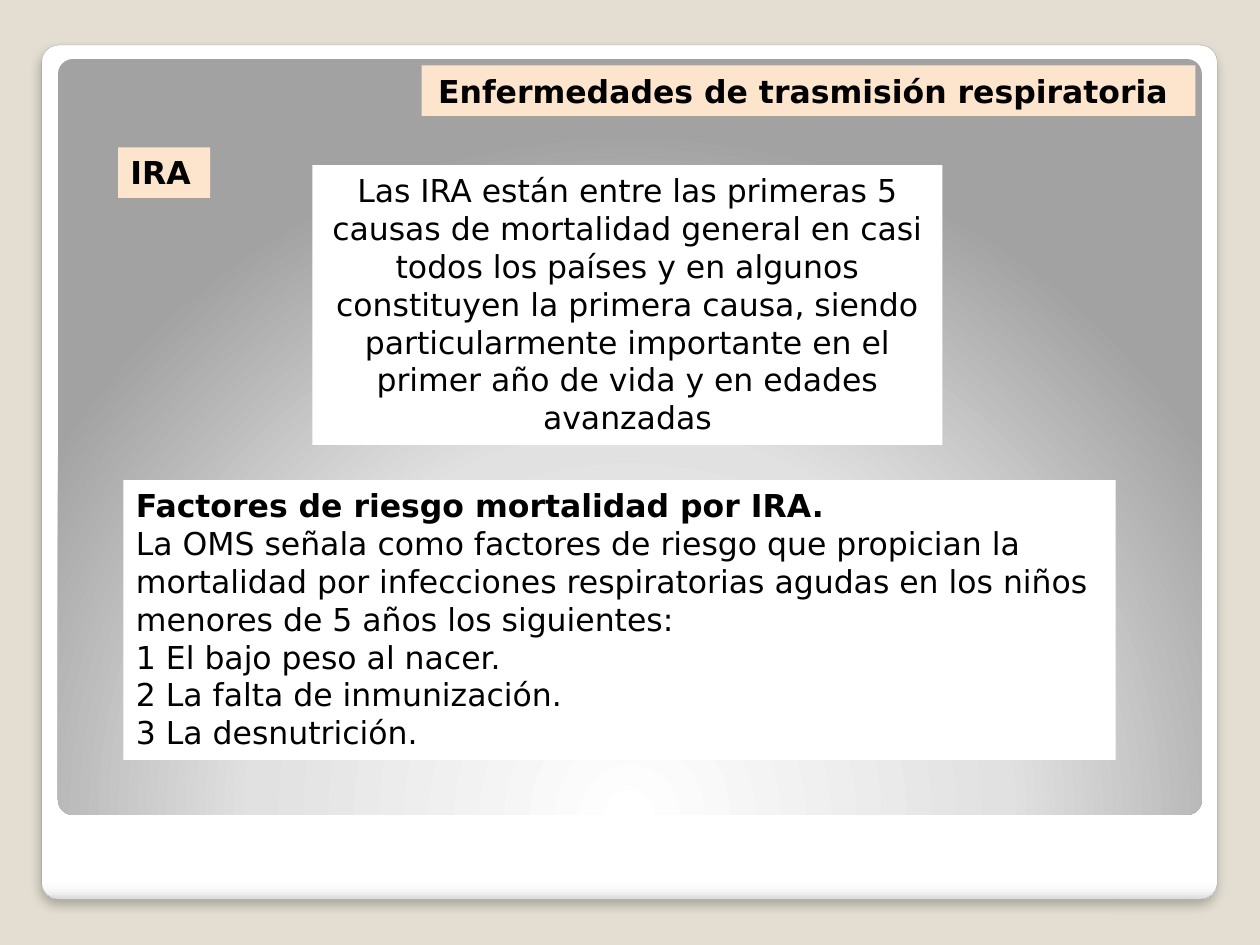
from pptx import Presentation
from pptx.dml.color import RGBColor
from pptx.enum.shapes import MSO_SHAPE
from pptx.enum.text import MSO_ANCHOR, MSO_AUTO_SIZE, PP_ALIGN
from pptx.oxml import parse_xml
from pptx.oxml.ns import nsdecls, qn
from pptx.util import Cm, Pt

ROUND = MSO_SHAPE.ROUNDED_RECTANGLE
LEFT, CENTER = PP_ALIGN.LEFT, PP_ALIGN.CENTER
FONT, SIZE = "DejaVu Sans", 18
WHITE, PEACH, BLACK = "FFFFFF", "FDE5CD", "000000"

# Panels: left, top, width, height in cm, gradient stops, gradient direction
CARD = ((0.84, 0.91, 23.7, 17.22),
        [(0, WHITE), (98, WHITE), (99, "F7F7F7"), (100, "DADADA")],
        '<a:lin ang="5400000" scaled="0"/>')
GLOW = ((1.17, 1.19, 23.06, 15.24),
        [(0, WHITE), (55, "E1E1E1"), (100, "A2A2A2")],
        '<a:path path="circle"><a:fillToRect l="50000" t="175000" '
        'r="50000" b="-75000"/></a:path>')

# Boxes: place in cm, fill, alignment, wrap, lines of (text, bold)
BOXES = [
    ((6.3, 3.33, 12.7, 5.64), WHITE, CENTER, True, [
        ("Las IRA están entre las primeras 5 causas de mortalidad general en "
         "casi todos los países y en algunos constituyen la primera causa, "
         "siendo particularmente importante en el primer año de vida y en "
         "edades avanzadas", False)]),
    ((8.5, 1.32, 15.6, 1.02), PEACH, CENTER, True, [
        ("Enfermedades de trasmisión respiratoria ", True)]),
    ((2.49, 9.68, 20, 5.64), WHITE, LEFT, True, [
        ("Factores de riesgo mortalidad por IRA.", True),
        ("La OMS señala como factores de riesgo que propician la mortalidad "
         "por infecciones respiratorias agudas en los niños menores de 5 años "
         "los siguientes:", False),
        ("1 El bajo peso al nacer.", False),
        ("2 La falta de inmunización.", False),
        ("3 La desnutrición.", False)]),
    ((2.38, 2.97, 1.86, 1.02), PEACH, LEFT, False, [("IRA", True)]),
]


def color(code):
    return RGBColor.from_string(code)


def add_panel(slide, place, stops, way):
    """Add a rounded panel with a gradient fill and no outline."""
    panel = slide.shapes.add_shape(ROUND, *map(Cm, place))
    panel.adjustments[0] = 0.02
    panel.shadow.inherit = False
    panel.line.fill.background()
    panel.fill.background()
    marks = "".join(f'<a:gs pos="{pos * 1000}"><a:srgbClr val="{code}"/></a:gs>'
                    for pos, code in stops)
    props = panel.element.spPr
    props.replace(props.find(qn("a:noFill")), parse_xml(
        f'<a:gradFill {nsdecls("a")} rotWithShape="1">'
        f'<a:gsLst>{marks}</a:gsLst>{way}</a:gradFill>'))
    return panel


def add_shadow(shape):
    shape.element.spPr.find(qn("a:effectLst")).append(parse_xml(
        f'<a:outerShdw {nsdecls("a")} blurRad="{Pt(6)}" dist="{Pt(4)}" '
        'dir="5400000" algn="t" rotWithShape="0">'
        f'<a:srgbClr val="{BLACK}"><a:alpha val="25000"/></a:srgbClr>'
        '</a:outerShdw>'))


def add_box(slide, place, fill, align, wrap, lines):
    box = slide.shapes.add_textbox(*map(Cm, place))
    box.fill.solid()
    box.fill.fore_color.rgb = color(fill)
    frame = box.text_frame
    frame.word_wrap = wrap
    frame.auto_size = MSO_AUTO_SIZE.SHAPE_TO_FIT_TEXT
    frame.vertical_anchor = MSO_ANCHOR.TOP
    frame.text = "\n".join(text for text, bold in lines)
    for para, (text, bold) in zip(frame.paragraphs, lines):
        para.alignment = align
        font = para.runs[0].font
        font.name, font.size, font.bold = FONT, Pt(SIZE), bold
        font.color.rgb = color(BLACK)


def main():
    deck = Presentation()
    deck.slide_width, deck.slide_height = Cm(25.4), Cm(19.05)
    slide = deck.slides.add_slide(deck.slide_layouts[6])
    back = slide.background.fill
    back.solid()
    back.fore_color.rgb = color("E3DED1")

    card = add_panel(slide, *CARD)
    card.line.color.rgb = color("A4A4A4")
    card.line.width = Pt(0.16)
    add_shadow(card)
    add_panel(slide, *GLOW)
    for box in BOXES:
        add_box(slide, *box)
    deck.save("out.pptx")


if __name__ == "__main__":
    main()
